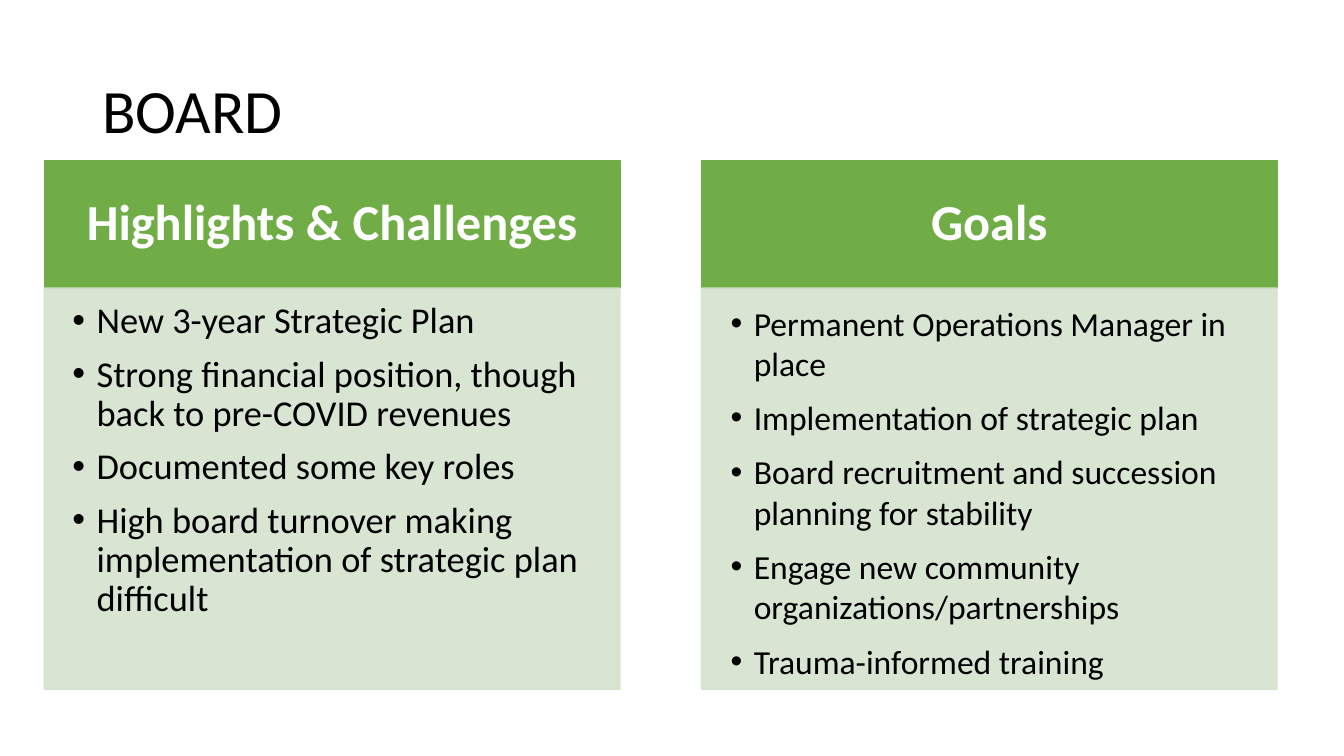
"""Build the BOARD slide: two headed columns of bullet points."""
from lxml import etree
from pptx import Presentation
from pptx.dml.color import RGBColor
from pptx.enum.shapes import MSO_SHAPE
from pptx.enum.text import MSO_ANCHOR, PP_ALIGN
from pptx.oxml.ns import qn
from pptx.util import Pt

RECTANGLE = MSO_SHAPE.RECTANGLE
TOP, MIDDLE = MSO_ANCHOR.TOP, MSO_ANCHOR.MIDDLE
LEFT, CENTER = PP_ALIGN.LEFT, PP_ALIGN.CENTER

TITLE = "BOARD"
COLUMNS = [
    {
        "heading": "Highlights & Challenges",
        "size": 26, "line_spacing": 0.9, "hanging": 17.3,
        "points": [
            "New 3-year Strategic Plan",
            "Strong financial position, though back to pre-COVID revenues",
            "Documented some key roles",
            "High board turnover making implementation of strategic plan difficult",
        ],
    },
    {
        "heading": "Goals",
        "size": 24, "line_spacing": 1.0, "hanging": 16.6,
        "points": [
            "Permanent Operations Manager in place",
            "Implementation of strategic plan",
            "Board recruitment and succession planning for stability",
            "Engage new community organizations/partnerships",
            "Trauma-informed training",
        ],
    },
]

FONT = "Calibri"
BLACK, WHITE, GREEN, PALE_GREEN = "000000", "FFFFFF", "70AD47", "D4E2CE"
COLUMN_LEFT, COLUMN_WIDTH, COLUMN_STEP = 31.7, 411.1, 469.4
HEADING_TOP, HEADING_HEIGHT = 114.5, 91.2
BODY_TOP, BODY_HEIGHT = HEADING_TOP + HEADING_HEIGHT, 286.6
BULLET_INDENT = 22.3


def color(value):
    return RGBColor.from_string(value)


def set_alpha(fill_element, percent):
    alpha = etree.SubElement(fill_element.find(qn("a:srgbClr")), qn("a:alpha"))
    alpha.set("val", str(percent * 1000))


def add_panel(slide, left, top, width, height, fill, alpha=None):
    shape = slide.shapes.add_shape(RECTANGLE, Pt(left), Pt(top), Pt(width), Pt(height))
    shape.shadow.inherit = False
    shape.fill.solid()
    shape.fill.fore_color.rgb = color(fill)
    shape.line.color.rgb = color(fill)
    shape.line.width = Pt(1)
    if alpha:
        for fill_element in list(shape.element.spPr.iter(qn("a:solidFill"))):
            set_alpha(fill_element, alpha)
    return shape


def add_bullet(paragraph, hanging):
    properties = paragraph._p.get_or_add_pPr()
    properties.set("marL", str(Pt(BULLET_INDENT)))
    properties.set("indent", str(-Pt(hanging)))
    etree.SubElement(properties, qn("a:buFont")).set("typeface", "Arial")
    etree.SubElement(properties, qn("a:buChar")).set("char", "•")


def write(shape, lines, size, text_color=BLACK, bold=False, align=LEFT, anchor=MIDDLE,
          margins=(7.2, 3.6, 7.2, 3.6), line_spacing=0.9, space_before=0, hanging=None):
    frame = shape.text_frame
    frame.word_wrap = True
    frame.vertical_anchor = anchor
    (frame.margin_left, frame.margin_top,
     frame.margin_right, frame.margin_bottom) = map(Pt, margins)
    for index, line in enumerate(lines):
        paragraph = frame.add_paragraph() if index else frame.paragraphs[0]
        paragraph.alignment = align
        paragraph.line_spacing = line_spacing
        paragraph.space_before = Pt(space_before)
        if hanging:
            add_bullet(paragraph, hanging)
        run = paragraph.add_run()
        run.text = line
        run.font.name = FONT
        run.font.size = Pt(size)
        run.font.bold = bold
        run.font.color.rgb = color(text_color)


def main():
    presentation = Presentation()
    presentation.slide_width, presentation.slide_height = Pt(960), Pt(540)
    slide = presentation.slides.add_slide(presentation.slide_layouts[6])

    title = slide.shapes.add_textbox(Pt(66), Pt(28.8), Pt(828), Pt(104.4))
    write(title, [TITLE], 44)

    for index, column in enumerate(COLUMNS):
        left = COLUMN_LEFT + index * COLUMN_STEP
        heading = add_panel(slide, left, HEADING_TOP, COLUMN_WIDTH, HEADING_HEIGHT, GREEN)
        write(heading, [column["heading"]], 36, text_color=WHITE, bold=True, align=CENTER,
              margins=(20, 11.5, 20, 11.5))
        body = add_panel(slide, left, BODY_TOP, COLUMN_WIDTH, BODY_HEIGHT, PALE_GREEN, alpha=89)
        write(body, column["points"], column["size"], anchor=TOP, margins=(15, 10.3, 20, 0),
              line_spacing=column["line_spacing"], space_before=10, hanging=column["hanging"])

    presentation.save("out.pptx")


if __name__ == "__main__":
    main()
